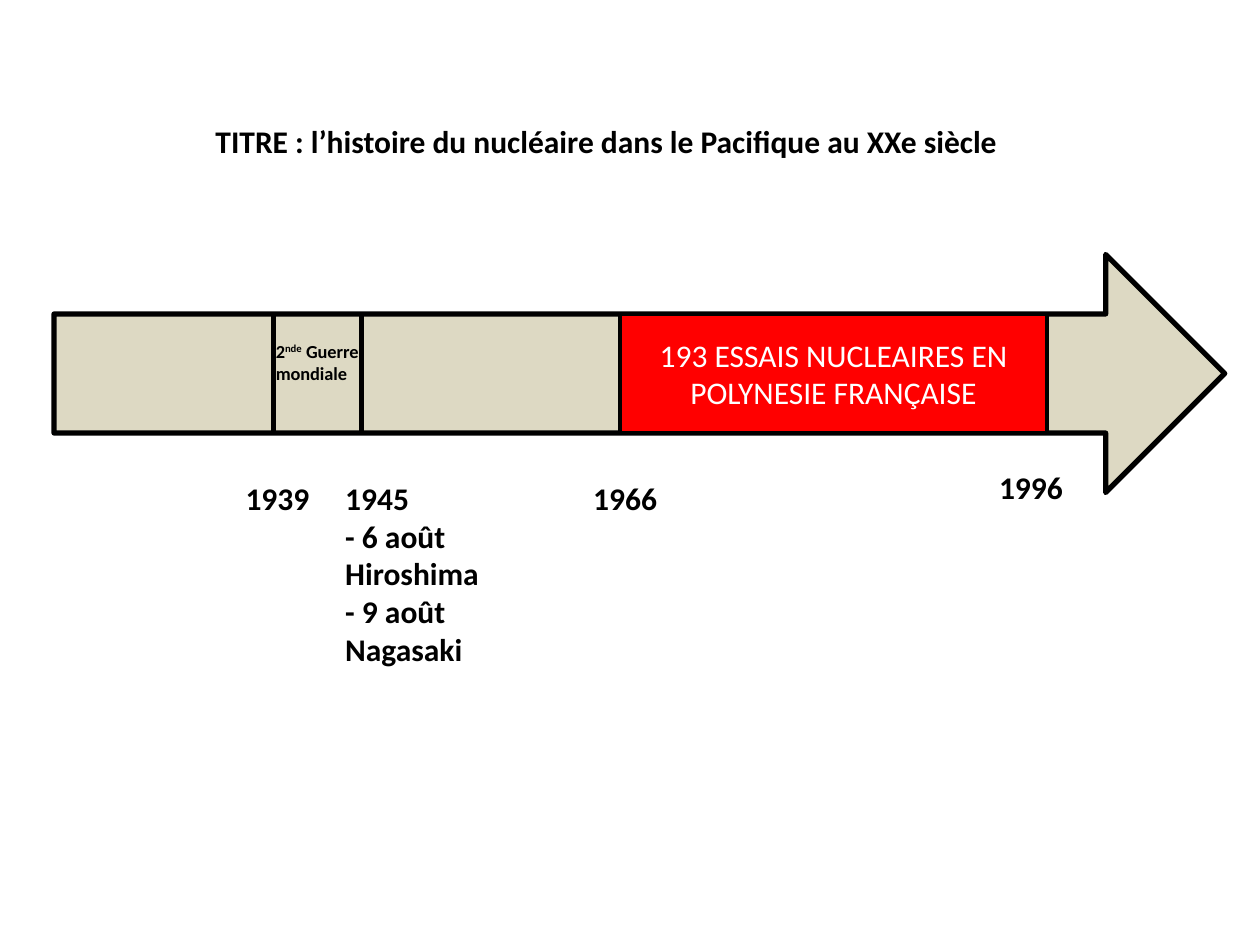
import pptx
import pptx.util
import pptx.dml.color
import pptx.enum.shapes
import pptx.enum.text
import pptx.oxml.ns
from pptx.util import Cm
from lxml import etree

COLOURS = {"ink": "000000", "sand": "DDD9C3", "red": "FF0000", "white": "FFFFFF"}
SHAPES = pptx.enum.shapes.MSO_SHAPE
ALIGN = pptx.enum.text.PP_ALIGN
ANCHOR = pptx.enum.text.MSO_ANCHOR
FIT = pptx.enum.text.MSO_AUTO_SIZE


def colour(name):
    return pptx.dml.color.RGBColor.from_string(COLOURS[name])


class Timeline:
    """Holds the text style and the current slide."""

    def __init__(self, page, font="Calibri"):
        self.page = page
        self.font = font

    def add_lines(self, frame, lines, size=18, bold=True, ink="ink", align=ALIGN.LEFT):
        """Each line is a list of (text, baseline percent) spans."""
        for number, line in enumerate(lines):
            para = frame.paragraphs[0] if number == 0 else frame.add_paragraph()
            para.alignment = align
            for text, raised in line:
                span = para.add_run()
                span.text = text
                values = {"name": self.font, "size": pptx.util.Pt(size), "bold": bold}
                for key, value in values.items():
                    setattr(span.font, key, value)
                span.font.color.rgb = colour(ink)
                if raised:
                    span.font._element.set("baseline", str(raised * 1000))

    def outline(self, line, width):
        line.color.rgb = colour("ink")
        line.width = pptx.util.Pt(width)

    def title(self, text, left, top, width, height):
        box = self.page.shapes.title
        places = {"left": left, "top": top, "width": width, "height": height}
        for key, value in places.items():
            setattr(box, key, Cm(value))
        frame = box.text_frame
        formats = {"vertical_anchor": ANCHOR.TOP, "auto_size": FIT.NONE, "word_wrap": True}
        for key, value in formats.items():
            setattr(frame, key, value)
        self.add_lines(frame, [[(text, 0)]])

    def label(self, lines, left, top, width, height, size=18):
        box = self.page.shapes.add_textbox(Cm(left), Cm(top), Cm(width), Cm(height))
        box.text_frame.word_wrap = False
        box.text_frame.auto_size = FIT.SHAPE_TO_FIT_TEXT
        self.add_lines(box.text_frame, lines, size)

    def shape(self, kind, fill, left, top, width, height, line):
        shape = self.page.shapes.add_shape(kind, Cm(left), Cm(top), Cm(width), Cm(height))
        shape.shadow.inherit = False
        shape.fill.solid()
        shape.fill.fore_color.rgb = colour(fill)
        self.outline(shape.line, line)
        return shape

    def period(self, text, *place):
        frame = self.shape(SHAPES.RECTANGLE, "red", *place, line=2).text_frame
        frame.word_wrap = True
        frame.vertical_anchor = ANCHOR.MIDDLE
        self.add_lines(frame, [[(text, 0)]], bold=False, ink="white", align=ALIGN.CENTER)

    def divider(self, x, top, bottom):
        straight = pptx.enum.shapes.MSO_CONNECTOR.STRAIGHT
        line = self.page.shapes.add_connector(straight, Cm(x), Cm(top), Cm(x), Cm(bottom))
        self.outline(line.line, 3)
        etree.SubElement(line._element.spPr, pptx.oxml.ns.qn("a:effectLst"))


def main():
    deck = pptx.Presentation()
    deck.slide_width, deck.slide_height = Cm(25.4), Cm(19.05)
    timeline = Timeline(deck.slides.add_slide(deck.slide_layouts[5]))

    # Title
    timeline.title("TITRE : l’histoire du nucléaire dans le Pacifique au XXe siècle",
                   4.09, 2.34, 16.41, 1.02)

    # Time arrow: its shaft is the middle half of its height
    top, height = 5.13, 4.8
    shaft_top, shaft_bottom = top + height / 4, top + height * 3 / 4
    timeline.shape(SHAPES.RIGHT_ARROW, "sand", 1.09, top, 23.6, height, line=3)

    # Periods
    for x in (5.51, 7.29):
        timeline.divider(x, shaft_top, shaft_bottom)
    timeline.label([[("2", 0), ("nde", 30), (" Guerre", 0)], [("mondiale", 0)]],
                   5.31, 6.73, 2.41, 1.19, size=10.5)
    timeline.period("193 ESSAIS NUCLEAIRES EN POLYNESIE FRANÇAISE",
                    12.5, shaft_top, 8.61, shaft_bottom - shaft_top)

    # Dates
    for year, left, date_top in (("1939", 4.7, 9.53), ("1966", 11.71, 9.53),
                                 ("1996", 19.89, 9.32)):
        timeline.label([[(year, 0)]], left, date_top, 1.8, 1.02)
    events = ("1945", "- 6 août", "Hiroshima", "- 9 août", "Nagasaki")
    timeline.label([[(event, 0)] for event in events], 6.71, 9.53, 3.23, 4.11)

    deck.save("out.pptx")


if __name__ == "__main__":
    main()
